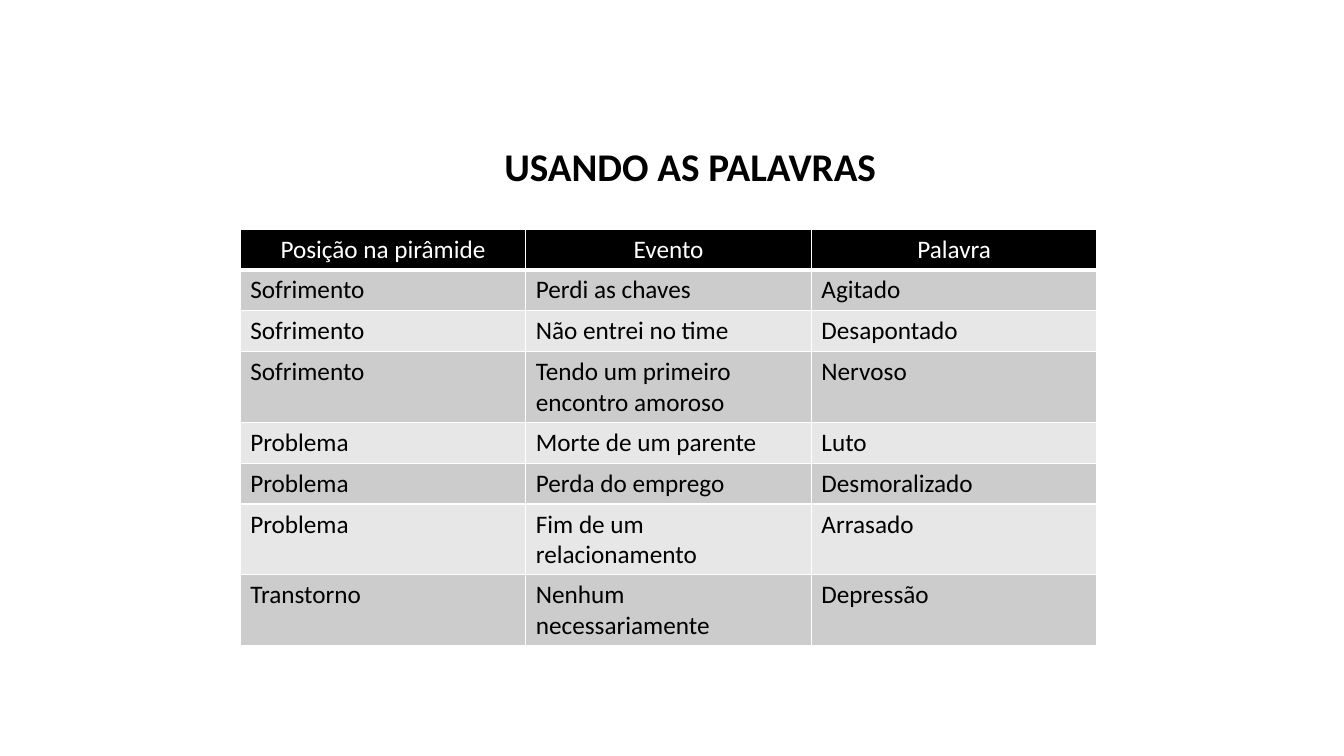
"""Build the slide with the table of words for each level of the pyramid."""
import dataclasses

import pptx
import pptx.dml.color
import pptx.enum.text
import pptx.oxml
import pptx.oxml.ns
import pptx.util

Pt = pptx.util.Pt
ALIGN = pptx.enum.text.PP_ALIGN


@dataclasses.dataclass(frozen=True)
class Theme:
    font: str = "Calibri"
    title_size: int = 28
    table_size: int = 18
    dark: str = "000000"
    light: str = "FFFFFF"
    bands: tuple = ("CCCCCC", "E7E7E7")
    thin: int = 1
    thick: int = 3


def write_text(text_frame, text, *, font, size, color, bold=False, align=ALIGN.LEFT):
    paragraph = text_frame.paragraphs[0]
    paragraph.alignment = align
    run = paragraph.add_run()
    run.text = text
    run.font.name = font
    run.font.size = Pt(size)
    run.font.bold = bold
    run.font.color.rgb = pptx.dml.color.RGBColor.from_string(color)


class SlideBuilder:
    def __init__(self, slide, theme):
        self.slide = slide
        self.theme = theme

    def add_title(self, text, left, top, width, height):
        title = self.slide.shapes.title
        title.left, title.top = Pt(left), Pt(top)
        title.width, title.height = Pt(width), Pt(height)
        frame = title.text_frame
        frame.word_wrap = False
        frame.auto_size = pptx.enum.text.MSO_AUTO_SIZE.SHAPE_TO_FIT_TEXT
        frame.vertical_anchor = pptx.enum.text.MSO_ANCHOR.TOP
        write_text(frame, text, font=self.theme.font, size=self.theme.title_size,
                   color=self.theme.dark, bold=True)

    def add_table(self, rows, left, top, column_width, row_heights):
        column_count = len(rows[0])
        table = self.slide.shapes.add_table(
            len(rows), column_count, Pt(left), Pt(top),
            Pt(column_width * column_count), Pt(sum(row_heights))).table
        for column in table.columns:
            column.width = Pt(column_width)
        for row_index, (texts, height) in enumerate(zip(rows, row_heights)):
            table.rows[row_index].height = Pt(height)
            for column_index, text in enumerate(texts):
                self.format_cell(table.cell(row_index, column_index), text, row_index)

    def format_cell(self, cell, text, row_index):
        theme = self.theme
        header = row_index == 0
        self.add_borders(cell, theme.thick if header else theme.thin)
        fill = theme.dark if header else theme.bands[(row_index - 1) % 2]
        cell.fill.solid()
        cell.fill.fore_color.rgb = pptx.dml.color.RGBColor.from_string(fill)
        write_text(cell.text_frame, text, font=theme.font, size=theme.table_size,
                   color=theme.light if header else theme.dark,
                   align=ALIGN.CENTER if header else ALIGN.LEFT)

    def add_borders(self, cell, bottom_width):
        namespace = pptx.oxml.ns.nsdecls("a")
        properties = cell._tc.get_or_add_tcPr()
        for side in "LRTB":
            width = Pt(bottom_width if side == "B" else self.theme.thin)
            properties.append(pptx.oxml.parse_xml(
                f'<a:ln{side} {namespace} w="{int(width)}"><a:solidFill>'
                f'<a:srgbClr val="{self.theme.light}"/></a:solidFill></a:ln{side}>'))


def main():
    presentation = pptx.Presentation()
    presentation.slide_width, presentation.slide_height = Pt(960), Pt(540)
    slide = presentation.slides.add_slide(presentation.slide_layouts.get_by_name("Title Only"))
    builder = SlideBuilder(slide, Theme())
    rows = [
        ("Posição na pirâmide", "Evento", "Palavra"),
        ("Sofrimento", "Perdi as chaves", "Agitado"),
        ("Sofrimento", "Não entrei no time", "Desapontado"),
        ("Sofrimento", "Tendo um primeiro encontro amoroso", "Nervoso"),
        ("Problema", "Morte de um parente", "Luto"),
        ("Problema", "Perda do emprego", "Desmoralizado"),
        ("Problema", "Fim de um relacionamento", "Arrasado"),
        ("Transtorno", "Nenhum necessariamente", "Depressão"),
    ]
    single, double = 29.2, 50.4
    row_heights = [double if len(event) > 20 else single for _, event, _ in rows]
    builder.add_table(rows, left=171.6, top=163.6, column_width=204, row_heights=row_heights)
    builder.add_title("USANDO AS PALAVRAS", left=353, top=98, width=283, height=41)
    presentation.save("out.pptx")


if __name__ == "__main__":
    main()
